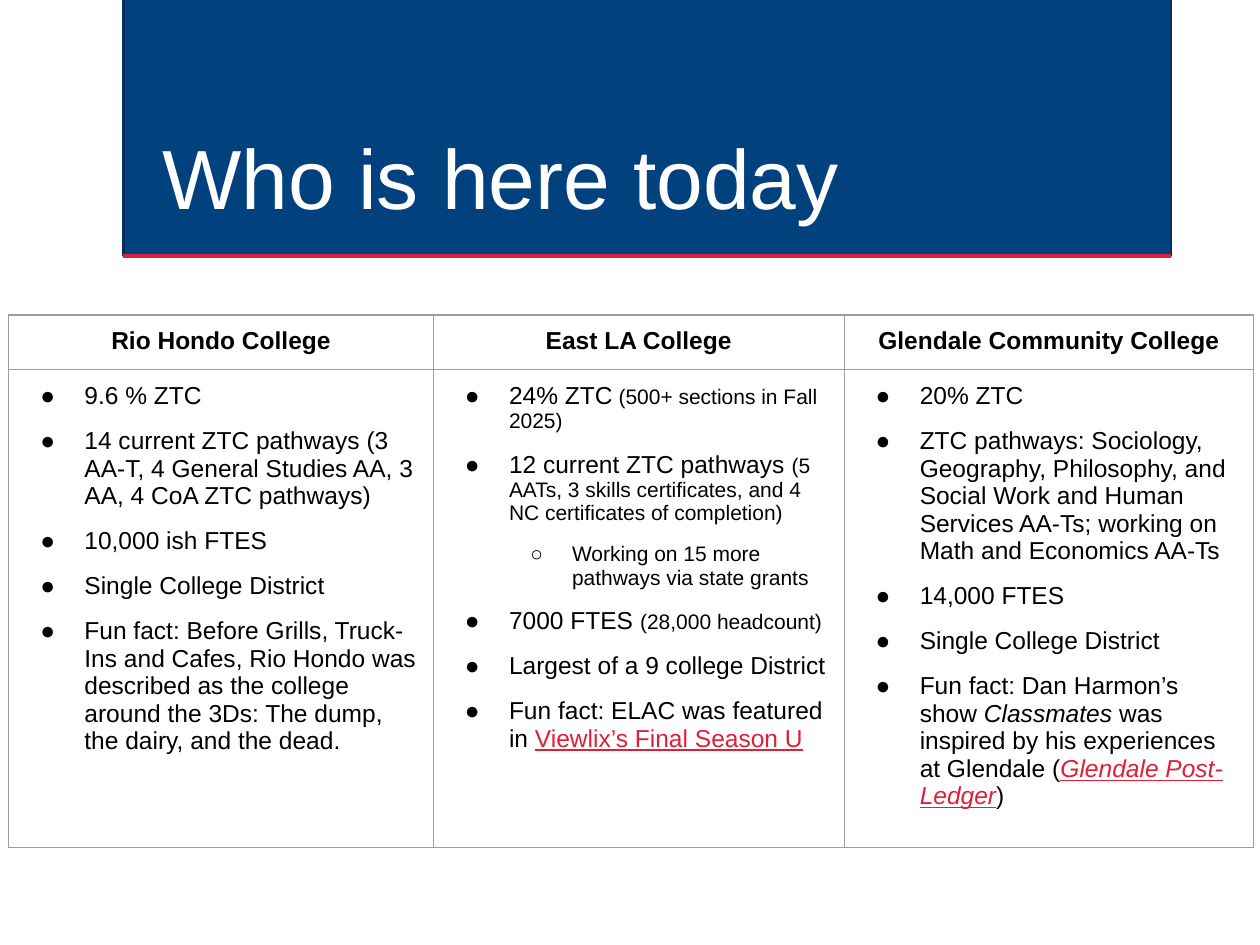
"""Build the slide that introduces the three colleges taking part today."""
import pptx
import pptx.dml.color
import pptx.enum.shapes
import pptx.enum.text
import pptx.oxml
import pptx.oxml.ns
import pptx.util

COLORS = {"navy": "00417E", "edge": "002F5B", "red": "DE1F37",
          "white": "FFFFFF", "black": "000000", "grid": "9E9E9E"}
BODY = {"size": 14, "color": "black"}
SMALL = {"size": 12}
LINK = {"color": "red", "underline": True}
ITALIC = {"italic": True}
BULLETS = [("●", 0.5, -0.35), ("○", 1, -0.33)]

COLLEGES = [
    ("Rio Hondo College", [
        (0, [("9.6 % ZTC", {})]),
        (0, [("14 current ZTC pathways (3 AA-T, 4 General Studies AA, 3 AA, 4 CoA ZTC pathways)", {})]),
        (0, [("10,000 ish FTES", {})]),
        (0, [("Single College District", {})]),
        (0, [("Fun fact: Before Grills, Truck-Ins and Cafes, Rio Hondo was described as the college "
              "around the 3Ds: The dump, the dairy, and the dead.", {})]),
    ]),
    ("East LA College", [
        (0, [("24% ZTC", {}), (" (500+ sections in Fall 2025)", SMALL)]),
        (0, [("12 current ZTC pathways ", {}),
             ("(5 AATs, 3 skills certificates, and 4 NC certificates of completion)", SMALL)]),
        (1, [("Working on 15 more pathways via state grants", SMALL)]),
        (0, [("7000 FTES ", {}), ("(28,000 headcount)", SMALL)]),
        (0, [("Largest of a 9 college District", {})]),
        (0, [("Fun fact: ELAC was featured in ", {}), ("Viewlix’s Final Season U", LINK)]),
    ]),
    ("Glendale Community College", [
        (0, [("20% ZTC", {})]),
        (0, [("ZTC pathways: Sociology, Geography, Philosophy, and Social Work and Human "
              "Services AA-Ts; working on Math and Economics AA-Ts", {})]),
        (0, [("14,000 FTES", {})]),
        (0, [("Single College District", {})]),
        (0, [("Fun fact: Dan Harmon’s show ", {}), ("Classmates", ITALIC),
             (" was inspired by his experiences at Glendale (", {}),
             ("Glendale Post-Ledger", {**LINK, **ITALIC}), (")", {})]),
    ]),
]


def add_span(para, text, values):
    span = para.add_run()
    span.text = text
    span.font.name = "Arial"
    for name, value in {**BODY, **values}.items():
        if name == "color":
            span.font.color.rgb = pptx.dml.color.RGBColor.from_string(COLORS[value])
        else:
            setattr(span.font, name, pptx.util.Pt(value) if name == "size" else value)


def style_cell(cell):
    cell.fill.background()
    for side in ("left", "right", "top", "bottom"):
        setattr(cell, f"margin_{side}", pptx.util.Inches(0.1))
    properties = cell._tc.get_or_add_tcPr()
    for place, side in enumerate("LRTB"):
        border = pptx.oxml.parse_xml(
            f'<a:ln{side} {pptx.oxml.ns.nsdecls("a")} w="9525"><a:solidFill>'
            f'<a:srgbClr val="{COLORS["grid"]}"/></a:solidFill></a:ln{side}>')
        properties.insert(place, border)


deck = pptx.Presentation()
deck.slide_width, deck.slide_height = pptx.util.Inches(10), pptx.util.Inches(7.5)
page = deck.slides.add_slide(deck.slide_layouts[6])
column, row = deck.slide_width / 1000, deck.slide_height / 750
left, right, top, bottom = (int(v) for v in (98 * column, 929.5 * column, -2 * row, 203 * row))

banner = page.shapes.add_shape(
    pptx.enum.shapes.MSO_SHAPE.RECTANGLE, left, top, right - left, bottom - top)
banner.shadow.inherit = False
banner.fill.solid()
banner.fill.fore_color.rgb = pptx.dml.color.RGBColor.from_string(COLORS["navy"])
rule = page.shapes.add_connector(
    pptx.enum.shapes.MSO_CONNECTOR.STRAIGHT, left, bottom, right, bottom)
rule._element.spPr.append(pptx.oxml.parse_xml(f'<a:effectLst {pptx.oxml.ns.nsdecls("a")}/>'))
for outlined, color, width in ((banner, "edge", 1.25), (rule, "red", 2.5)):
    outlined.line.color.rgb = pptx.dml.color.RGBColor.from_string(COLORS[color])
    outlined.line.width = pptx.util.Pt(width)

title = page.shapes.add_textbox(
    int(119 * column), int(88 * row), int(788 * column), int(98 * row)).text_frame
for name, value in {"word_wrap": True, "vertical_anchor": pptx.enum.text.MSO_ANCHOR.BOTTOM}.items():
    setattr(title, name, value)
title.paragraphs[0].line_spacing = 0.9
add_span(title.paragraphs[0], "Who is here today", {"size": 48, "color": "white"})

table = page.shapes.add_table(
    2, len(COLLEGES), int(7 * column), int(250 * row), int(988 * column), int(402 * row)).table
for name in ("first_row", "horz_banding"):
    setattr(table, name, False)
for place, width in enumerate((337, 326, 325)):
    table.columns[place].width = int(width * column)
for place, height in enumerate((42, 360)):
    table.rows[place].height = int(height * row)

for place, (college, facts) in enumerate(COLLEGES):
    header, body = table.cell(0, place), table.cell(1, place)
    for cell in (header, body):
        style_cell(cell)
    para = header.text_frame.paragraphs[0]
    para.alignment = pptx.enum.text.PP_ALIGN.CENTER
    para.space_after = pptx.util.Pt(10)
    add_span(para, college, {"bold": True})
    for number, (level, spans) in enumerate(facts):
        para = body.text_frame.add_paragraph() if number else body.text_frame.paragraphs[0]
        para.level = level
        para.space_before = pptx.util.Pt(10 if number else 0)
        para.space_after = pptx.util.Pt(10 if number == len(facts) - 1 else 0)
        symbol, margin, indent = BULLETS[level]
        properties = para._p.get_or_add_pPr()
        properties.set("marL", str(pptx.util.Inches(margin)))
        properties.set("indent", str(pptx.util.Inches(indent)))
        for bullet in (f'<a:buClr {{}}><a:srgbClr val="{COLORS["black"]}"/></a:buClr>',
                       '<a:buFont {} typeface="Arial"/>', f'<a:buChar {{}} char="{symbol}"/>'):
            properties.append(pptx.oxml.parse_xml(bullet.format(pptx.oxml.ns.nsdecls("a"))))
        for text, values in spans:
            add_span(para, text, values)

deck.save("out.pptx")
